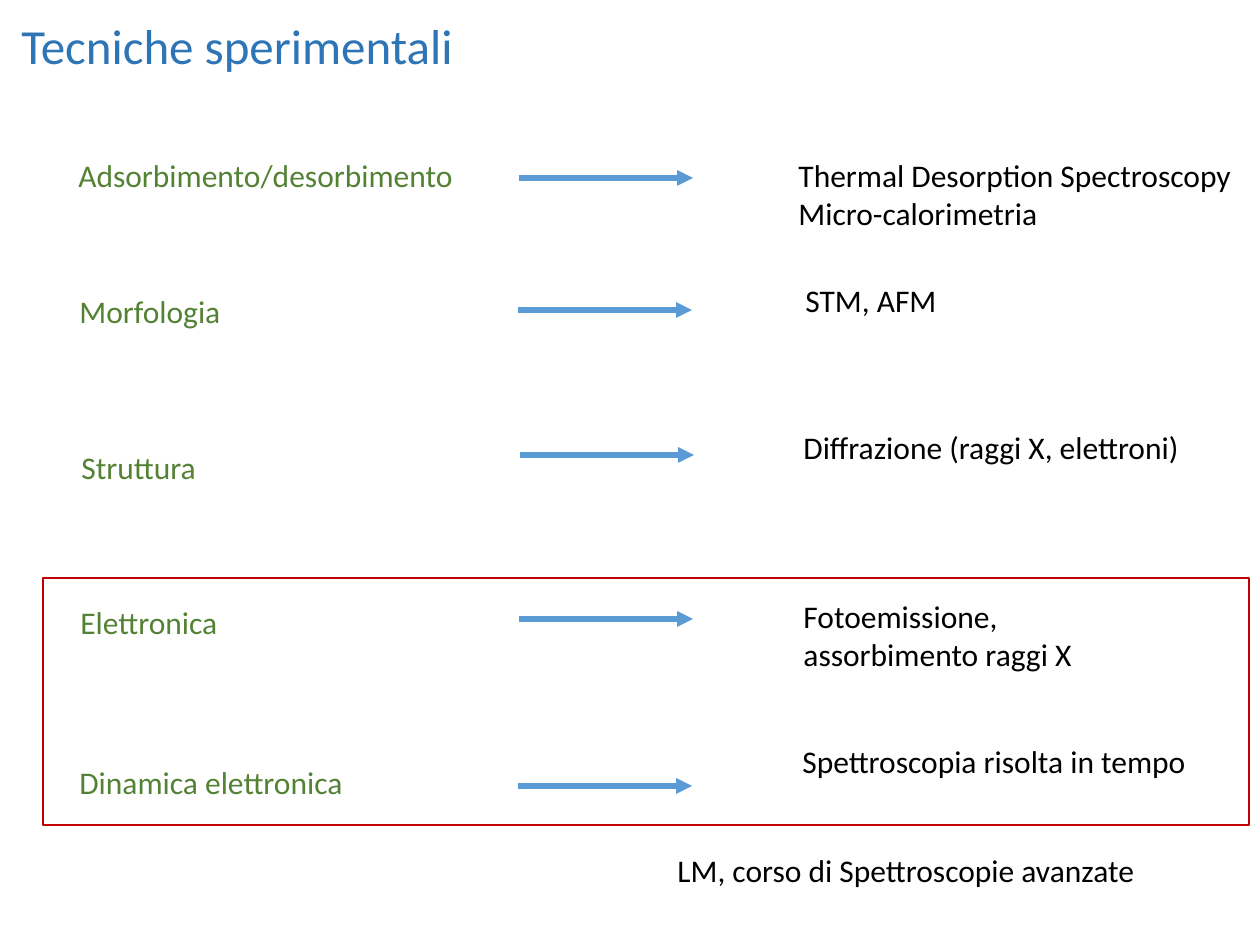
from lxml import etree
from pptx import Presentation
from pptx.dml.color import RGBColor
from pptx.enum.shapes import MSO_CONNECTOR, MSO_SHAPE
from pptx.enum.text import MSO_AUTO_SIZE
from pptx.oxml.ns import qn
from pptx.util import Pt

STRAIGHT = MSO_CONNECTOR.STRAIGHT
RECTANGLE = MSO_SHAPE.RECTANGLE
FIT_TEXT = MSO_AUTO_SIZE.SHAPE_TO_FIT_TEXT

EMU_PER_PX = 914400 / 126
FONT = "Calibri"
COLORS = {
    "title": "2E75B6",
    "topic": "548235",
    "text": "000000",
    "arrow": "5B9BD5",
    "frame": "C00000",
}
ARROW_LENGTH = 174
LINE_HEIGHTS = {1: 50, 2: 90}

# left, top, topic, topic width, topic dy, arrow dx, arrow dy,
# techniques, techniques width, techniques dx
ROWS = [
    (66, 150, "Adsorbimento/desorbimento", 404, 0, 453, 28,
     ["Thermal Desorption Spectroscopy", "Micro-calorimetria"], 462, 720),
    (67, 275, "Morfologia", 168, 11, 451, 35, ["STM, AFM"], 158, 726),
    (69, 422, "Struttura", 141, 20, 451, 33,
     ["Diffrazione (raggi X, elettroni)"], 407, 722),
    (68, 591, "Elettronica", 165, 6, 451, 28,
     ["Fotoemissione,", "assorbimento raggi X"], 296, 723),
    (67, 736, "Dinamica elettronica", 292, 21, 451, 50,
     ["Spettroscopia risolta in tempo"], 413, 723),
]


def px(*lengths):
    return [round(length * EMU_PER_PX) for length in lengths]


def color(name):
    return RGBColor.from_string(COLORS[name])


def add_text(shapes, box, lines, color_name, size=18):
    frame = shapes.add_textbox(*px(*box)).text_frame
    frame.word_wrap = False
    frame.auto_size = FIT_TEXT
    frame.text = "\n".join(lines)
    for paragraph in frame.paragraphs:
        paragraph.font.name = FONT
        paragraph.font.size = Pt(size)
        paragraph.font.color.rgb = color(color_name)


def add_arrow(shapes, left, y):
    arrow = shapes.add_connector(STRAIGHT, *px(left, y, left + ARROW_LENGTH, y))
    arrow.line.color.rgb = color("arrow")
    arrow.line.width = Pt(3)
    etree.SubElement(arrow.line._get_or_add_ln(), qn("a:tailEnd"), type="triangle")
    etree.SubElement(arrow._element.spPr, qn("a:effectLst"))


def add_row(slide, left, top, topic, topic_width, topic_dy, arrow_dx, arrow_dy,
            techniques, techniques_width, techniques_dx):
    """Group a topic, an arrow and the techniques that study it."""
    shapes = slide.shapes.add_group_shape().shapes
    add_text(shapes, (left, top + topic_dy, topic_width, LINE_HEIGHTS[1]),
             [topic], "topic")
    add_arrow(shapes, left + arrow_dx, top + arrow_dy)
    add_text(shapes, (left + techniques_dx, top, techniques_width,
                      LINE_HEIGHTS[len(techniques)]), techniques, "text")


def add_course_frame(slide, left, top, width, height):
    """Outline the advanced topics, with the course name below."""
    shapes = slide.shapes.add_group_shape().shapes
    frame = shapes.add_shape(RECTANGLE, *px(left, top, width, height))
    frame.shadow.inherit = False
    frame.fill.background()
    frame.line.color.rgb = color("frame")
    frame.line.width = Pt(1)
    add_text(shapes, (left + 622, top + height + 20, 488, LINE_HEIGHTS[1]),
             ["LM, corso di Spettroscopie avanzate"], "text")


def main():
    presentation = Presentation()
    presentation.slide_width, presentation.slide_height = px(1260, 945)
    slide = presentation.slides.add_slide(presentation.slide_layouts[6])
    add_text(slide.shapes, (9, 9, 461, 72), ["Tecniche sperimentali"], "title", 28)
    for row in ROWS:
        add_row(slide, *row)
    add_course_frame(slide, 43, 578, 1206, 247)
    presentation.save("out.pptx")


if __name__ == "__main__":
    main()
